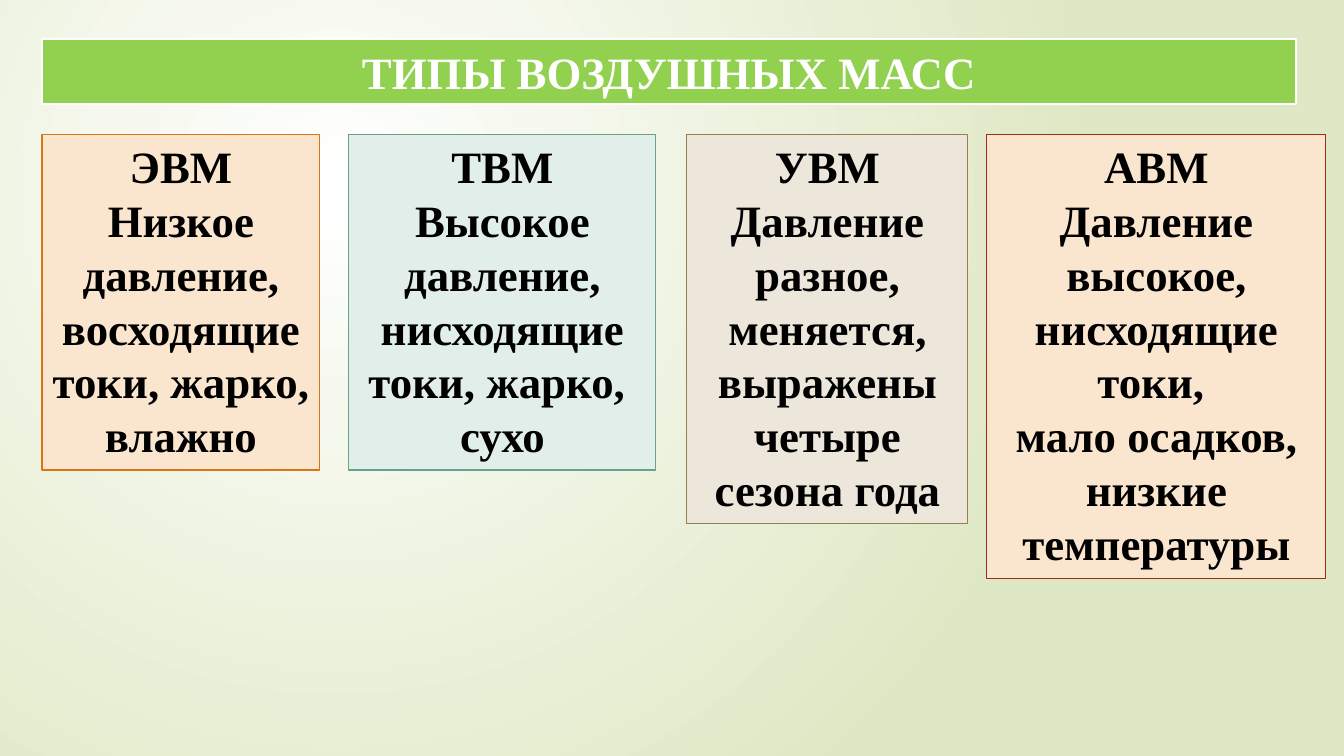
"""Slide on the types of air masses."""
from lxml import etree
from pptx import Presentation, util as u
from pptx.dml.color import RGBColor
from pptx.enum import shapes, text
from pptx.oxml import ns

PX = 12192000 / 1344
FONT = "Times New Roman"
COLORS = {
    "white": "FFFFFF", "black": "000000", "edge": "DFE8C4", "green": "92D050",
    "peach": "FAE5CF", "mint": "E1EEE9", "sand": "EDE6DB",
    "orange": "D47817", "teal": "65A48B", "brown": "987D4D", "red": "9E2E0F",
}
TITLE = "ТИПЫ ВОЗДУШНЫХ МАСС"
TOP = 134
CARDS = [
    (42, 278, 336, "peach", "orange",
     ["ЭВМ", "Низкое давление, восходящие токи, жарко, влажно"]),
    (349, 307, 336, "mint", "teal",
     ["ТВМ", "Высокое давление, нисходящие токи, жарко, ", "сухо"]),
    (687, 281, 390, "sand", "brown",
     ["УВМ", "Давление", "разное, меняется, выражены четыре сезона года"]),
    (987, 339, 445, "peach", "red",
     ["АВМ", "Давление", "высокое, нисходящие токи, ",
      "мало осадков, низкие температуры"]),
]


def px(num):
    return u.Emu(round(num * PX))


def rgb(name):
    return RGBColor.from_string(COLORS[name])


def paint(slide):
    fill = slide.background.fill
    fill.gradient()
    for stop, name in zip(fill.gradient_stops, ("white", "edge")):
        stop.color.rgb = rgb(name)
    grad = slide.element.find(".//" + ns.qn("a:gradFill"))
    grad.remove(grad.find(ns.qn("a:lin")))
    glow = etree.SubElement(grad, ns.qn("a:path"), path="circle")
    etree.SubElement(glow, ns.qn("a:fillToRect"),
                     l="50000", t="50000", r="100000", b="100000")


def style(box, fill, line, width):
    box.fill.solid()
    box.fill.fore_color.rgb = rgb(fill)
    box.line.color.rgb = rgb(line)
    box.line.width = u.Pt(width)


def write(box, lines, color, anchor):
    frame = box.text_frame
    frame.text = "\n".join(lines)
    frame.word_wrap = True
    frame.auto_size = text.MSO_AUTO_SIZE.NONE
    frame.vertical_anchor = anchor
    for para in frame.paragraphs:
        para.alignment = text.PP_ALIGN.CENTER
        font = para.font
        font.name, font.size, font.bold = FONT, u.Pt(32), True
        font.color.rgb = rgb(color)


def head(slide):
    bar = slide.shapes.title
    bar.left, bar.top, bar.width, bar.height = map(px, (42, 39, 1254, 65))
    style(bar, "green", "white", 1.75)
    write(bar, [TITLE], "white", text.MSO_ANCHOR.MIDDLE)


def card(slide, left, width, height, fill, line, lines):
    box = slide.shapes.add_shape(
        shapes.MSO_SHAPE.RECTANGLE, px(left), px(TOP), px(width), px(height))
    box.shadow.inherit = False
    style(box, fill, line, 0.75)
    write(box, lines, "black", text.MSO_ANCHOR.TOP)


def main():
    deck = Presentation()
    deck.slide_width, deck.slide_height = px(1344), px(756)
    slide = deck.slides.add_slide(deck.slide_layouts[5])
    paint(slide)
    head(slide)
    for item in CARDS:
        card(slide, *item)
    deck.save("out.pptx")


if __name__ == "__main__":
    main()
